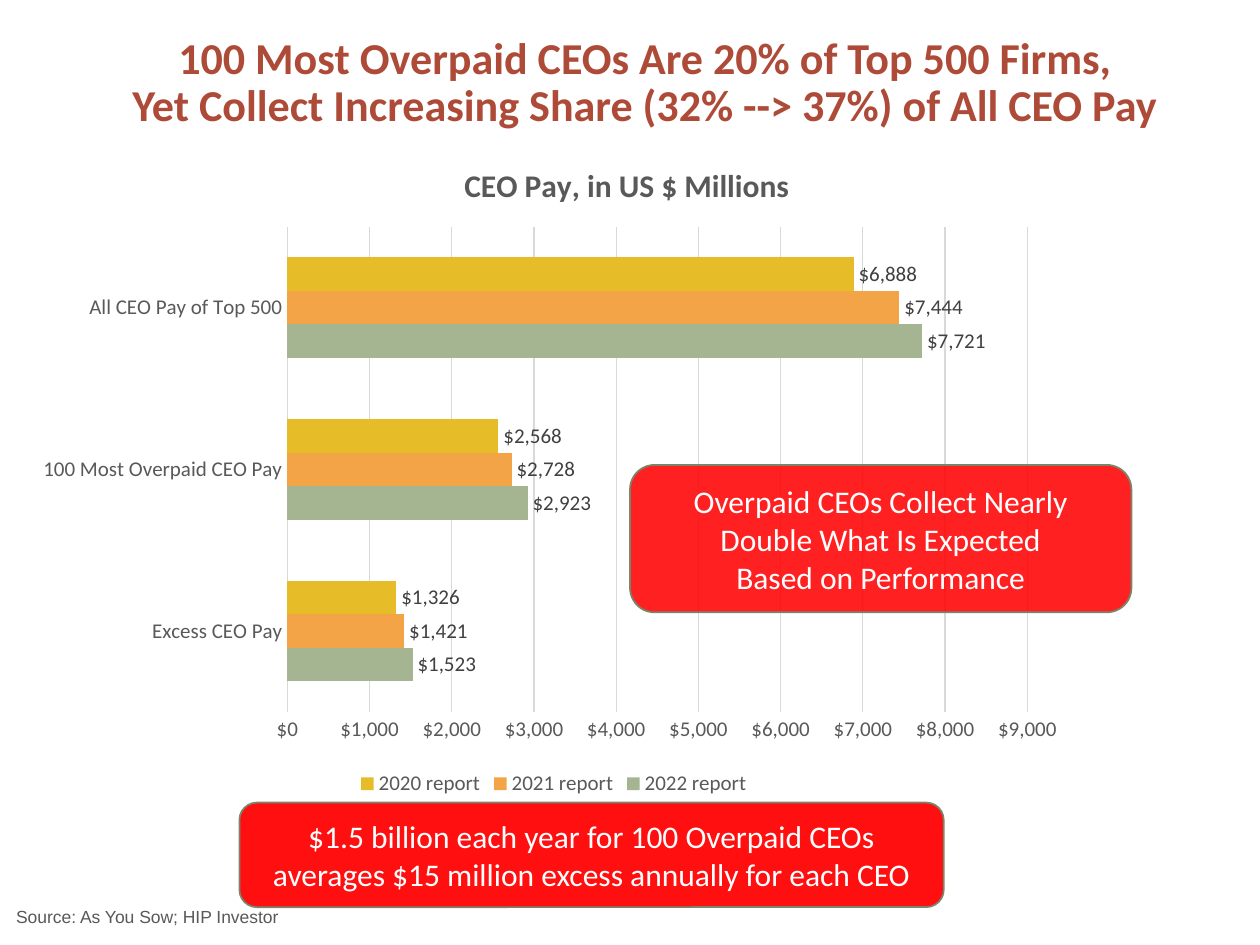
from lxml import etree
from pptx import Presentation
from pptx.chart.data import CategoryChartData
from pptx.dml.color import RGBColor
from pptx.enum.chart import XL_CHART_TYPE as ChartType
from pptx.enum.chart import XL_LABEL_POSITION as LabelPosition
from pptx.enum.chart import XL_LEGEND_POSITION as LegendPosition
from pptx.enum.chart import XL_TICK_MARK as TickMark
from pptx.enum.shapes import MSO_SHAPE as Shape
from pptx.enum.text import MSO_ANCHOR as Anchor
from pptx.enum.text import PP_ALIGN as Align
from pptx.oxml import parse_xml
from pptx.oxml.ns import nsdecls, qn
from pptx.util import Inches, Pt

CATEGORIES = ["Excess CEO Pay", "100 Most Overpaid CEO Pay", "All CEO Pay of Top 500"]
REPORTS = [
    ("2022 report", [1523, 2923, 7721], "A5B592"),
    ("2021 report", [1421, 2728, 7444], "F3A447"),
    ("2020 report", [1326, 2568, 6888], "E7BC29"),
]
DOLLARS = '"$"#,##0'


def color(value):
    return RGBColor.from_string(value)


def manual_layout(inner, **fractions):
    target = '<c:layoutTarget val="inner"/>' if inner else ""
    modes = '<c:xMode val="edge"/><c:yMode val="edge"/>'
    values = "".join(f'<c:{name} val="{value}"/>' for name, value in fractions.items())
    return parse_xml(
        f'<c:layout {nsdecls("c")}><c:manualLayout>{target}{modes}{values}'
        "</c:manualLayout></c:layout>"
    )


class PaySlide:
    """Holds the text style and the slide, and adds each kind of element."""

    font_name = "Calibri"
    gray = "595959"
    grid = "D9D9D9"

    def __init__(self, slide):
        self.slide = slide

    def style(self, font, size, text_color, **formats):
        values = {"name": self.font_name, "size": Pt(size), "bold": False, **formats}
        for name, value in values.items():
            setattr(font, name, value)
        font.color.rgb = color(text_color)

    def set_text(self, shape, text, size, text_color, align, anchor, spacing=None, **formats):
        frame = shape.text_frame
        frame.word_wrap = True
        frame.vertical_anchor = anchor
        paragraph = frame.paragraphs[0]
        paragraph.text = text
        paragraph.alignment = align
        paragraph.line_spacing = spacing
        self.style(paragraph.font, size, text_color, **formats)

    def text(self, box, *content, **formats):
        shape = self.slide.shapes.add_textbox(*map(Inches, box))
        self.set_text(shape, *content, **formats)

    def callout(self, box, text, opacity):
        shape = self.slide.shapes.add_shape(Shape.ROUNDED_RECTANGLE, *map(Inches, box))
        shape.shadow.inherit = False
        shape.fill.solid()
        shape.fill.fore_color.rgb = color("FF0000")
        fill = shape._element.spPr.find(qn("a:solidFill"))[0]
        etree.SubElement(fill, qn("a:alpha"), val=str(opacity * 1000))
        shape.line.color.rgb = color("7A866C")
        shape.line.width = Pt(1)
        self.set_text(shape, text, 18, "FFFFFF", Align.CENTER, Anchor.MIDDLE)

    def axis(self, axis):
        axis.major_tick_mark = axis.minor_tick_mark = TickMark.NONE
        self.style(axis.tick_labels.font, 12, self.gray)

    def bar_chart(self, box, title):
        data = CategoryChartData(number_format=DOLLARS)
        data.categories = CATEGORIES
        for name, values, _ in REPORTS:
            data.add_series(name, values)
        chart = self.slide.shapes.add_chart(
            ChartType.BAR_CLUSTERED, *map(Inches, box), data
        ).chart
        self.style(chart.font, 10, "000000")

        chart.has_title = True
        paragraph = chart.chart_title.text_frame.paragraphs[0]
        paragraph.text = title
        self.style(paragraph.runs[0].font, 18, self.gray, bold=True)
        title_element = chart.chart_title._element
        for layout in title_element.findall(qn("c:layout")):
            title_element.remove(layout)
        title_element.find(qn("c:tx")).addnext(manual_layout(False, x=0.41, y=0.02))

        area = chart._chartSpace.chart.plotArea
        for layout in area.findall(qn("c:layout")):
            area.remove(layout)
        area.insert(0, manual_layout(True, x=0.248, y=0.125, w=0.7, h=0.739))

        chart.has_legend = True
        chart.legend.position = LegendPosition.BOTTOM
        chart.legend.include_in_layout = False
        self.style(chart.legend.font, 12, self.gray)

        self.axis(chart.category_axis)
        self.axis(chart.value_axis)
        chart.value_axis.minimum_scale = 0
        chart.value_axis.maximum_scale = 9000
        chart.value_axis.major_unit = 1000
        chart.value_axis.tick_labels.number_format = DOLLARS
        chart.value_axis.tick_labels.number_format_is_linked = False
        chart.value_axis.format.line.fill.background()
        for part in (chart.category_axis, chart.value_axis.major_gridlines):
            part.format.line.color.rgb = color(self.grid)
            part.format.line.width = Pt(0.75)

        plot = chart.plots[0]
        plot.gap_width = 182
        plot.overlap = 0
        plot.vary_by_categories = False
        for series, (_, _, fill) in zip(plot.series, REPORTS):
            series.format.fill.solid()
            series.format.fill.fore_color.rgb = color(fill)
            labels = series.data_labels
            options = {
                "show_value": True,
                "number_format": DOLLARS,
                "number_format_is_linked": False,
                "position": LabelPosition.OUTSIDE_END,
            }
            for name, value in options.items():
                setattr(labels, name, value)
            self.style(labels.font, 12, "404040")


def main():
    presentation = Presentation()
    presentation.slide_width = Inches(10)
    presentation.slide_height = Inches(7.5)
    page = PaySlide(presentation.slides.add_slide(presentation.slide_layouts[6]))
    page.text(
        (0.81, 0.08, 8.62, 1.17),
        "100 Most Overpaid CEOs Are 20% of Top 500 Firms,\v"
        "Yet Collect Increasing Share (32% --> 37%) of All CEO Pay",
        25.2, "AE4B38", Align.CENTER, Anchor.MIDDLE, spacing=0.9, bold=True,
    )
    page.text(
        (0.03, 7.14, 6, 0.37), "Source: As You Sow; HIP Investor",
        10, page.gray, Align.LEFT, Anchor.TOP, name="Arial",
    )
    page.bar_chart((0.2, 1.15, 8.39, 5.21), "CEO Pay, in US $ Millions")
    page.callout(
        (5, 3.69, 3.98, 1.17),
        "Overpaid CEOs Collect Nearly Double What Is Expected\vBased on Performance", 87,
    )
    page.callout(
        (1.9, 6.37, 5.59, 0.83),
        "$1.5 billion each year for 100 Overpaid CEOs "
        "averages $15 million excess annually for each CEO", 94,
    )
    presentation.save("out.pptx")


if __name__ == "__main__":
    main()
